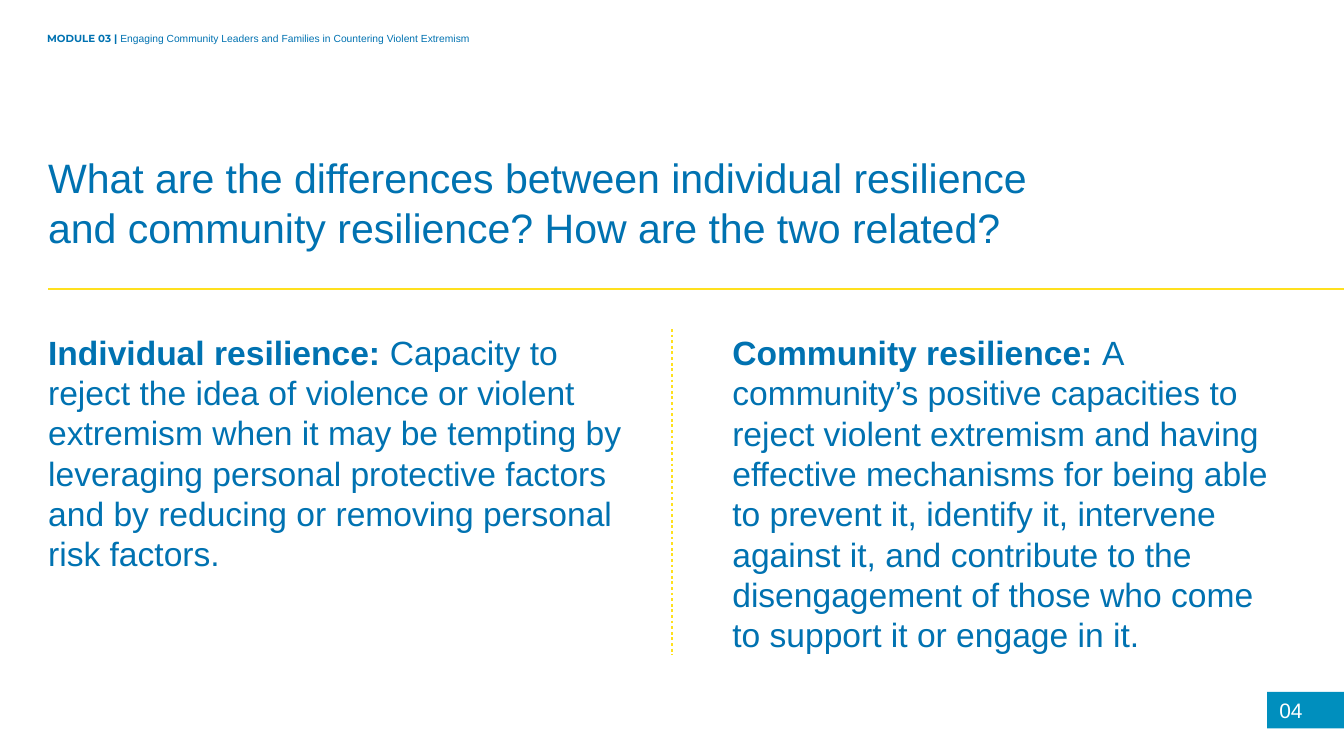
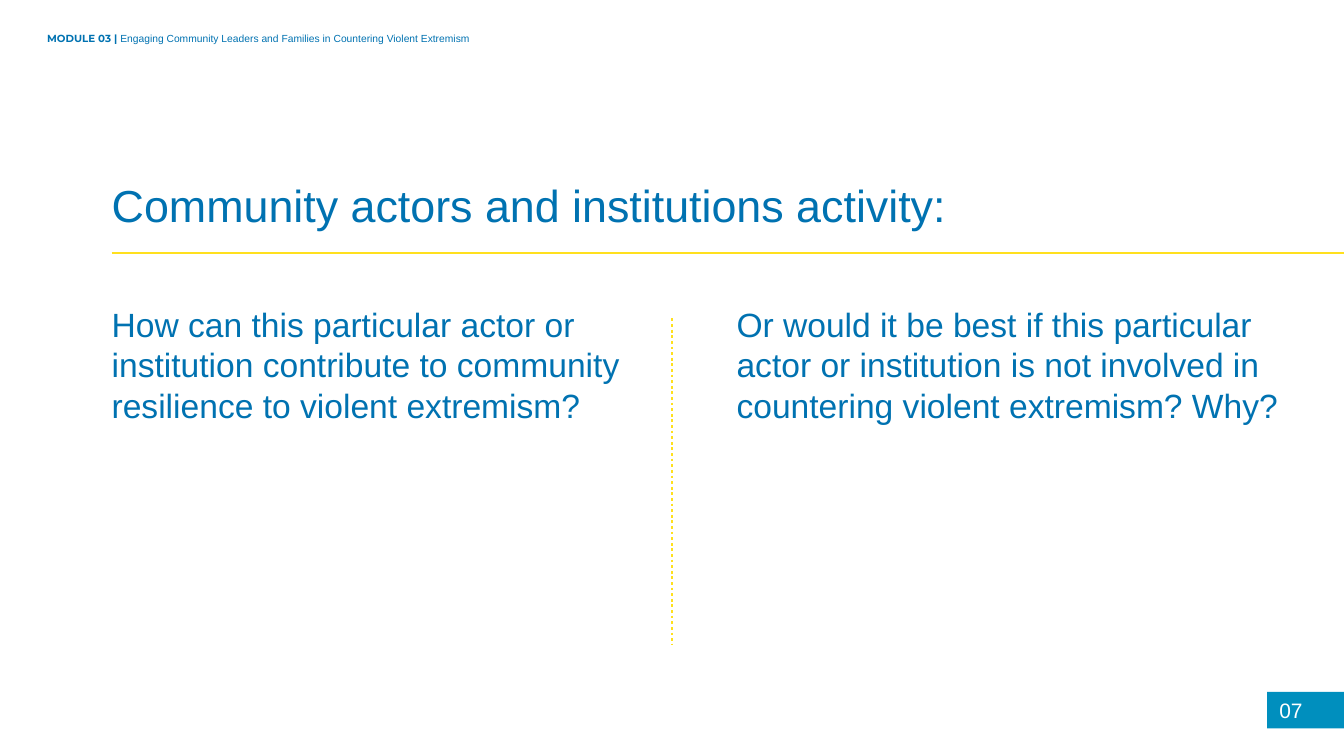
from dataclasses import dataclass

from lxml import etree
from pptx import Presentation
from pptx import util as u
from pptx.dml.color import RGBColor
from pptx.enum import dml, shapes, text
from pptx.oxml import ns

COLORS = {"text": "0072B1", "rule": "FFE01E", "tab": "008FBE", "number": "FFFFFF"}
PAGE_WIDTH, PAGE_HEIGHT = 25.4, 14.29
DIVIDER_X = PAGE_WIDTH / 2
LINE_PITCH = 1.2
BODY_SIZE = 18


@dataclass(frozen=True)
class Area:
    left: float
    top: float
    width: float
    height: float

    def lengths(self) -> list[u.Cm]:
        return [u.Cm(n) for n in (self.left, self.top, self.width, self.height)]


@dataclass(frozen=True)
class Span:
    text: str
    bold: bool = False
    font: str = "Arial"


@dataclass(frozen=True)
class Block:
    area: Area
    spans: tuple[Span, ...]


@dataclass(frozen=True)
class Comparison:
    number: str
    title: Block
    title_size: float
    rule_y: float
    columns: tuple[Block, Block]
    divider_top: float
    divider_bottom: float


HEADER = Block(Area(0.64, 0.48, 10.77, 0.41), (
    Span("MODULE 03 | ", True, "Montserrat"),
    Span("Engaging Community Leaders and Families in Countering Violent Extremism"),
))
TAB = Area(23.95, 13.08, 1.45, 0.69)
TAB_NUMBER = Area(24.18, 13.18, 1.22, 0.48)

PAGES = (
    Comparison(
        "04",
        Block(Area(0.91, 2.87, 18.95, 1.88), (Span(
            "What are the differences between individual resilience and community "
            "resilience? How are the two related?"),)),
        22, 5.46,
        (
            Block(Area(0.91, 6.22, 10.92, 4.62), (
                Span("Individual resilience: ", True),
                Span("Capacity to reject the idea of violence or violent extremism when it "
                     "may be tempting by leveraging personal protective factors and by "
                     "reducing or removing personal risk factors."),
            )),
            Block(Area(13.84, 6.22, 10.72, 6.15), (
                Span("Community resilience: ", True),
                Span("A community’s positive capacities to reject violent extremism and "
                     "having effective mechanisms for being able to prevent it, identify it, "
                     "intervene against it, and contribute to the disengagement of those "
                     "who come\nto support it or engage in it."),
            )),
        ),
        6.22, 12.37,
    ),
    Comparison(
        "07",
        Block(Area(2.11, 3.35, 18.95, 1.02),
              (Span("Community actors and institutions activity:"),)),
        24, 4.78,
        (
            Block(Area(2.11, 5.72, 11.51, 2.31), (Span(
                "How can this particular actor or institution contribute to community "
                "resilience to violent extremism?"),)),
            Block(Area(13.92, 5.72, 10.62, 2.31), (Span(
                "Or would it be best if this particular actor or institution is not involved "
                "in countering violent extremism? Why?"),)),
        ),
        6.02, 12.19,
    ),
)


def color(name: str) -> RGBColor:
    return RGBColor.from_string(COLORS[name])


def write(box, spans: tuple[Span, ...], size: float, ink: str = "text"):
    """Fill the first paragraph with spans; a newline becomes a line break."""
    box.text_frame.word_wrap = True
    para = box.text_frame.paragraphs[0]
    para.alignment = text.PP_ALIGN.LEFT
    for item in spans:
        for index, line in enumerate(item.text.split("\n")):
            if index:
                para.add_line_break()
            span = para.add_run()
            span.text = line
            span.font.name, span.font.size = item.font, u.Pt(size)
            span.font.bold = item.bold
            span.font.color.rgb = color(ink)
    return para


def anchor_at_bottom(box) -> None:
    frame = box.text_frame
    frame.margin_left = frame.margin_right = frame.margin_top = frame.margin_bottom = 0
    frame.vertical_anchor = text.MSO_ANCHOR.BOTTOM
    frame.auto_size = text.MSO_AUTO_SIZE.NONE


def fill_placeholder(box, block: Block, size: float):
    box.left, box.top, box.width, box.height = block.area.lengths()
    anchor_at_bottom(box)
    para = write(box, block.spans, size)
    para.line_spacing = u.Pt(size * LINE_PITCH)
    para.space_before = u.Pt(0)
    return para


def fill_column(box, block: Block) -> None:
    para = fill_placeholder(box, block, BODY_SIZE)
    para.space_after = u.Pt(10)
    properties = para._p.get_or_add_pPr()
    properties.set("marL", "0")
    properties.set("indent", "0")
    etree.SubElement(properties, ns.qn("a:buNone"))


def add_line(page, start: tuple[float, float], end: tuple[float, float],
             width: float, dotted: bool = False) -> None:
    points = [u.Cm(n) for n in (*start, *end)]
    line = page.shapes.add_connector(shapes.MSO_CONNECTOR.STRAIGHT, *points)
    line.line.color.rgb = color("rule")
    line.line.width = u.Pt(width)
    if dotted:
        line.line.dash_style = dml.MSO_LINE.ROUND_DOT
    etree.SubElement(line._element.spPr, ns.qn("a:effectLst"))


def add_page_number(page, number: str) -> None:
    group = page.shapes.add_group_shape()
    tab = group.shapes.add_shape(shapes.MSO_SHAPE.RECTANGLE, *TAB.lengths())
    tab.shadow.inherit = False
    tab.fill.solid()
    tab.fill.fore_color.rgb = color("tab")
    tab.line.fill.background()
    box = group.shapes.add_textbox(*TAB_NUMBER.lengths())
    anchor_at_bottom(box)
    write(box, (Span(number),), 11.2, "number")


def add_page(deck, content: Comparison) -> None:
    page = deck.slides.add_slide(deck.slide_layouts.get_by_name("Two Content"))
    title, *columns = page.placeholders
    fill_placeholder(title, content.title, content.title_size)
    for box, block in zip(columns, content.columns):
        fill_column(box, block)
    add_line(page, (content.title.area.left, content.rule_y),
             (PAGE_WIDTH, content.rule_y), 1.25)
    add_line(page, (DIVIDER_X, content.divider_top),
             (DIVIDER_X, content.divider_bottom), 1.5, dotted=True)
    add_page_number(page, content.number)
    write(page.shapes.add_textbox(*HEADER.area.lengths()), HEADER.spans, 5.5)


def main() -> None:
    deck = Presentation()
    deck.slide_width, deck.slide_height = u.Cm(PAGE_WIDTH), u.Cm(PAGE_HEIGHT)
    for content in PAGES:
        add_page(deck, content)
    deck.save("out.pptx")


if __name__ == "__main__":
    main()
